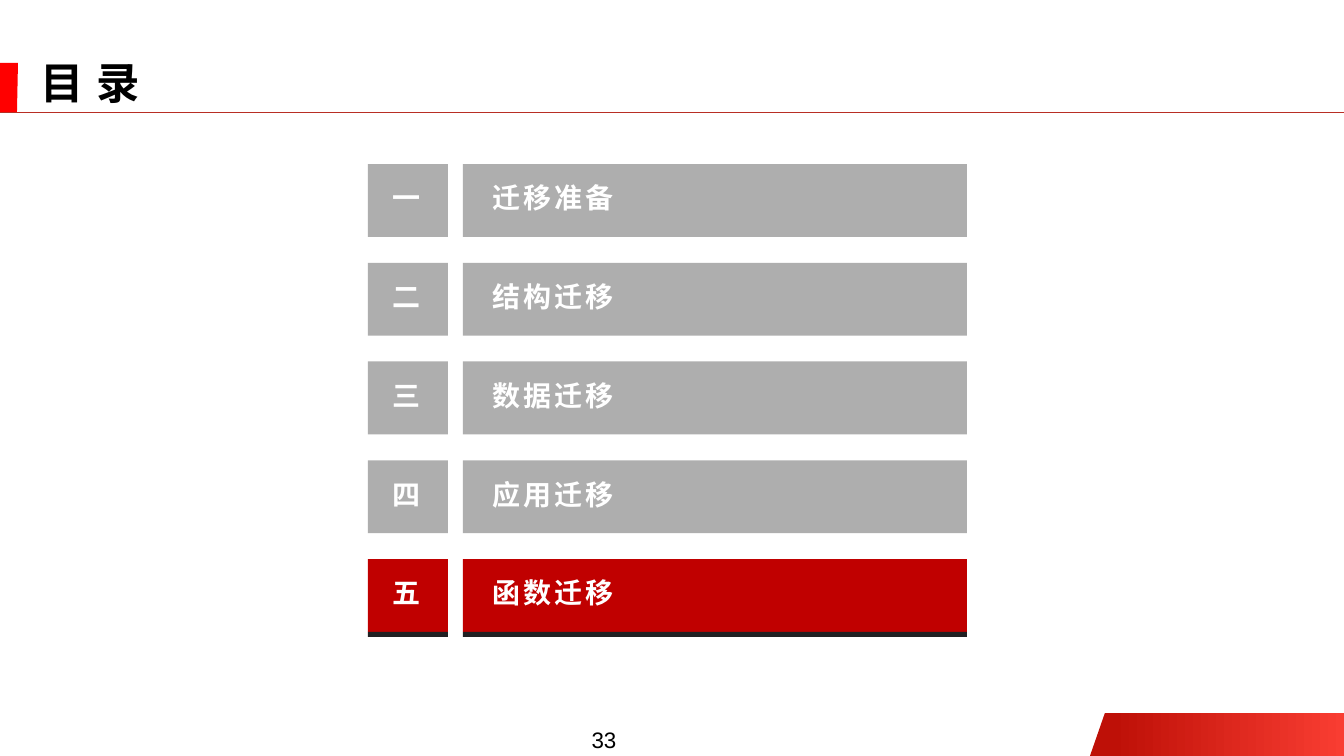
"""Build a contents slide with five numbered sections, the last one highlighted."""
from dataclasses import dataclass

from lxml import etree
from pptx import Presentation
from pptx import util as u
from pptx.dml.color import RGBColor
from pptx.enum import shapes, text
from pptx.oxml import ns

TITLE = "目 录"
PAGE_NUMBER = "33"
SECTIONS = [
    ("一", "迁移准备"),
    ("二", "结构迁移"),
    ("三", "数据迁移"),
    ("四", "应用迁移"),
    ("五", "函数迁移"),
]
CURRENT = 4

SLIDE_WIDTH, SLIDE_HEIGHT = 1344, 756
PX = 12192000 / SLIDE_WIDTH
TITLE_MARK = [(0, 63), (18, 63), (17, 113), (0, 113)]
FOOTER_BAND = [(1090, 756), (1105, 713), (1344, 713), (1344, 756)]
RULE_Y = 112
FIRST_TOP, LAST_TOP, ROW_HEIGHT = 164, 559, 73
COLUMNS = [(368, 80), (463, 504)]
NUMBER_TEXT, LABEL_TEXT = (383, 48), (483, 467)
TEXT_DROP, TEXT_HEIGHT = 12, 44
UNDERLINE_HEIGHT = 5


@dataclass(frozen=True)
class Theme:
    """Colours, fonts and type sizes."""
    white: str = "FFFFFF"
    black: str = "000000"
    grey: str = "AEAEAE"
    current: str = "C00000"
    underline: str = "202022"
    mark: str = "FF0000"
    rule: str = "B82E24"
    band_dark: str = "BE1007"
    band_light: str = "F93D32"
    font: str = "Noto Sans CJK SC"
    page_font: str = "Arial"
    title_size: int = 31
    section_size: int = 20
    page_size: int = 16


THEME = Theme()


def emu(*lengths):
    return [round(length * PX) for length in lengths]


def rgb(colour):
    return RGBColor.from_string(colour)


def add_text(slide, box, content, *, size, colour=THEME.white, font=THEME.font, bold=True,
             letter_gap=0, align=text.PP_ALIGN.LEFT, anchor=text.MSO_ANCHOR.TOP,
             wrap=True, line_spacing=None):
    frame = slide.shapes.add_textbox(*emu(*box)).text_frame
    frame.word_wrap = wrap
    frame.vertical_anchor = anchor
    paragraph = frame.paragraphs[0]
    paragraph.alignment = align
    paragraph.line_spacing = line_spacing
    run = paragraph.add_run()
    run.text = content
    run.font.name, run.font.size, run.font.bold = font, u.Pt(size), bold
    run.font.color.rgb = rgb(colour)
    properties = run.font._element
    if letter_gap:
        properties.set("spc", str(letter_gap * 100))
    etree.SubElement(properties, ns.qn("a:ea")).set("typeface", font)


def add_rectangle(slide, box, colour):
    shape = slide.shapes.add_shape(shapes.MSO_SHAPE.RECTANGLE, *emu(*box))
    shape.shadow.inherit = False
    shape.fill.solid()
    shape.fill.fore_color.rgb = rgb(colour)
    shape.line.fill.background()


def add_outline(slide, points):
    builder = slide.shapes.build_freeform(*points[0], scale=PX)
    builder.add_line_segments(points[1:], close=True)
    shape = builder.convert_to_shape()
    shape.shadow.inherit = False
    shape.line.fill.background()
    return shape


def add_frame(slide):
    band = add_outline(slide, FOOTER_BAND)
    band.fill.gradient()
    band.fill.gradient_angle = 0
    stops = [(0.09, THEME.band_dark), (1, THEME.band_light)]
    for stop, (position, colour) in zip(band.fill.gradient_stops, stops):
        stop.position = position
        stop.color.rgb = rgb(colour)

    mark = add_outline(slide, TITLE_MARK)
    mark.fill.solid()
    mark.fill.fore_color.rgb = rgb(THEME.mark)

    rule = slide.shapes.add_connector(
        shapes.MSO_CONNECTOR.STRAIGHT, *emu(0, RULE_Y, SLIDE_WIDTH, RULE_Y))
    rule.line.color.rgb = rgb(THEME.rule)
    rule.line.width = u.Pt(0.5)
    etree.SubElement(rule._element.spPr, ns.qn("a:effectLst"))

    add_text(slide, (580, 721, 48, 37), PAGE_NUMBER, size=THEME.page_size,
             colour=THEME.black, font=THEME.page_font, bold=False, wrap=False,
             align=text.PP_ALIGN.CENTER, anchor=text.MSO_ANCHOR.BOTTOM)
    add_text(slide, (31, 59, 1236, 53), TITLE, size=THEME.title_size, colour=THEME.black,
             letter_gap=1, anchor=text.MSO_ANCHOR.MIDDLE, line_spacing=0.9)


def add_section(slide, index, number, label):
    top = FIRST_TOP + index * (LAST_TOP - FIRST_TOP) / (len(SECTIONS) - 1)
    is_current = index == CURRENT
    for left, width in COLUMNS:
        add_rectangle(slide, (left, top, width, ROW_HEIGHT),
                      THEME.current if is_current else THEME.grey)
        if is_current:
            add_rectangle(slide, (left, top + ROW_HEIGHT, width, UNDERLINE_HEIGHT),
                          THEME.underline)
    text_top = top + TEXT_DROP
    for (left, width), content, gap, wrap in [(NUMBER_TEXT, number, 0, False),
                                              (LABEL_TEXT, label, 2, True)]:
        add_text(slide, (left, text_top, width, TEXT_HEIGHT), content,
                 size=THEME.section_size, letter_gap=gap, wrap=wrap)


def main():
    presentation = Presentation()
    presentation.slide_width, presentation.slide_height = emu(SLIDE_WIDTH, SLIDE_HEIGHT)
    slide = presentation.slides.add_slide(presentation.slide_layouts[6])
    slide.background.fill.solid()
    slide.background.fill.fore_color.rgb = rgb(THEME.white)
    add_frame(slide)
    for index, (number, label) in enumerate(SECTIONS):
        add_section(slide, index, number, label)
    presentation.save("out.pptx")


if __name__ == "__main__":
    main()
